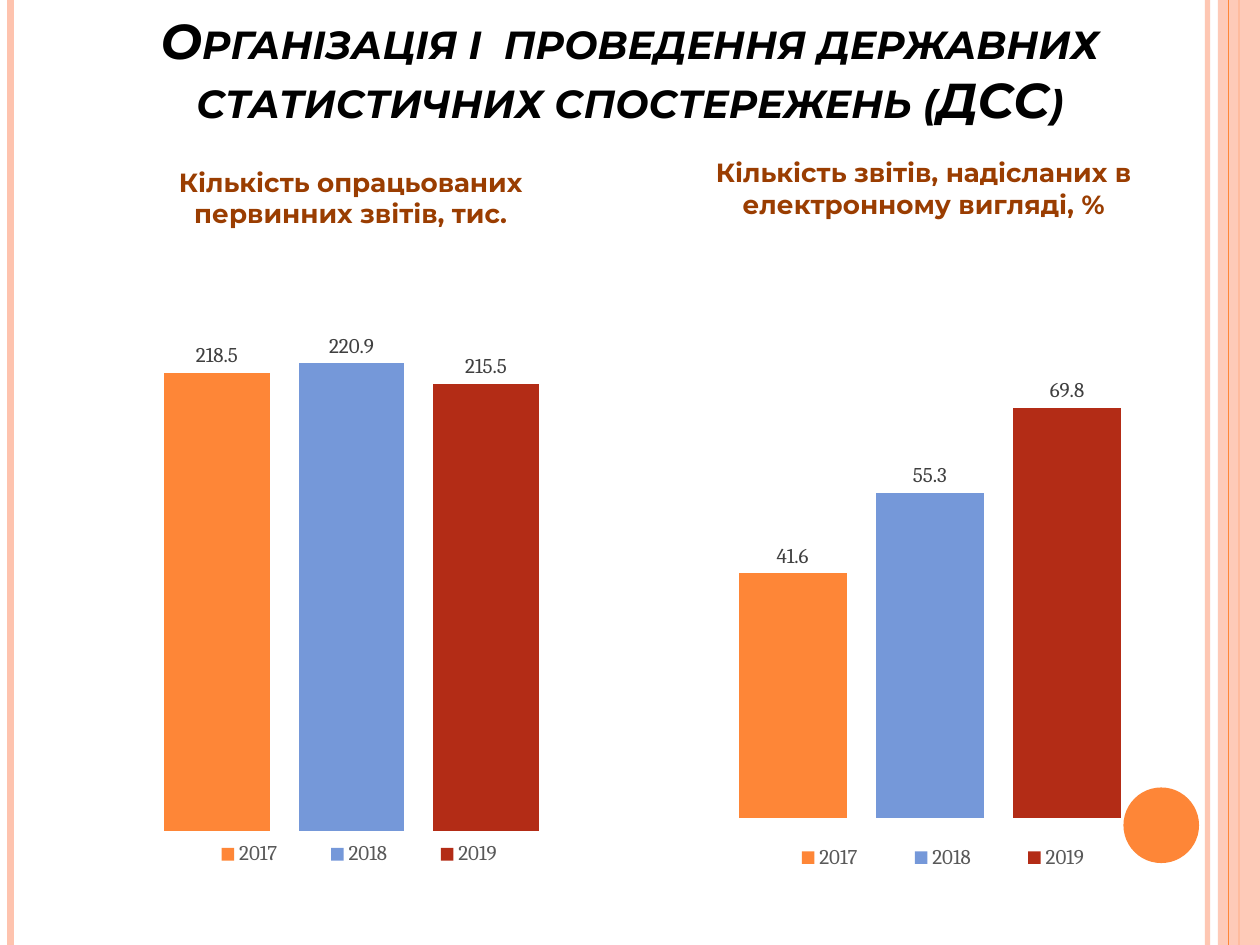
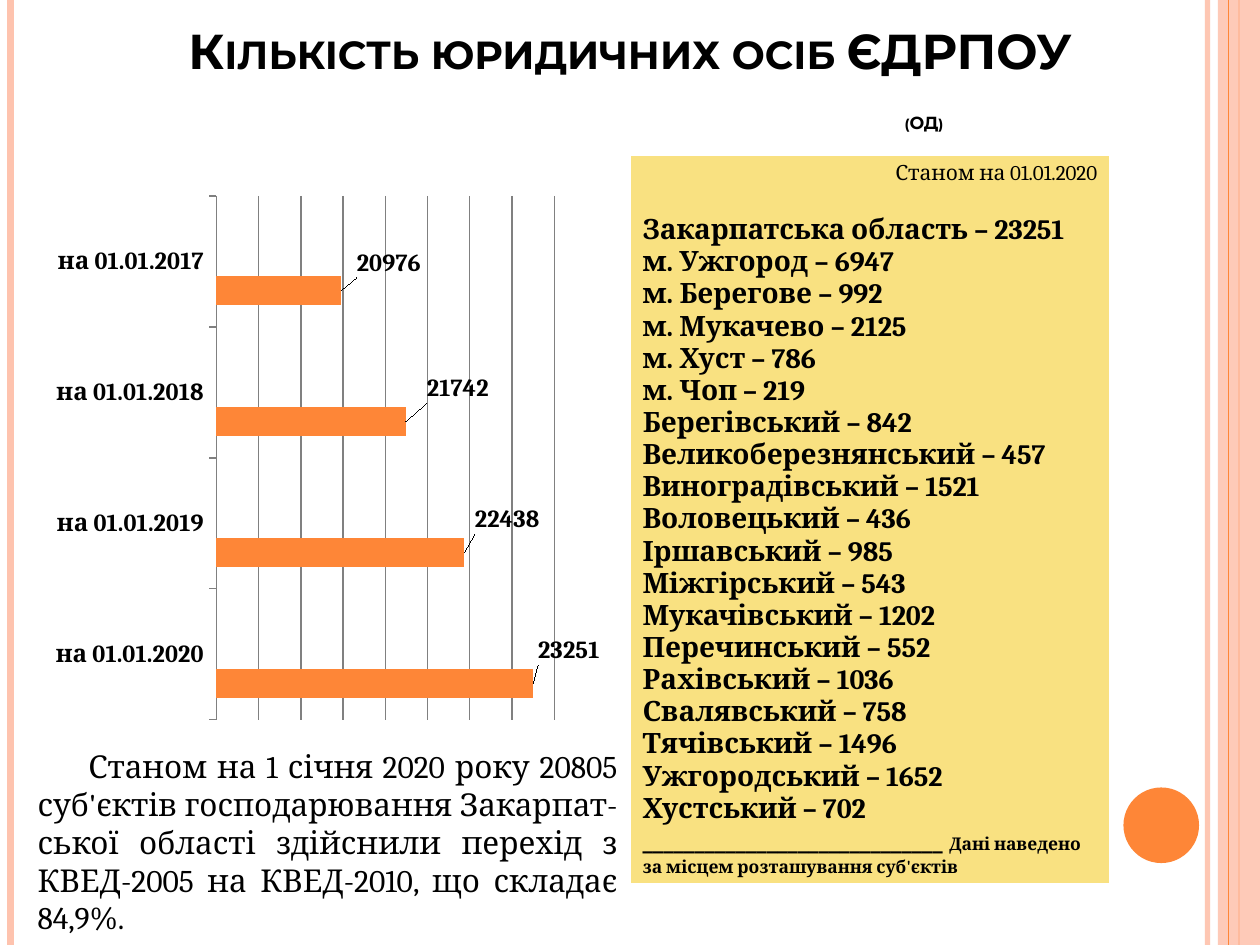
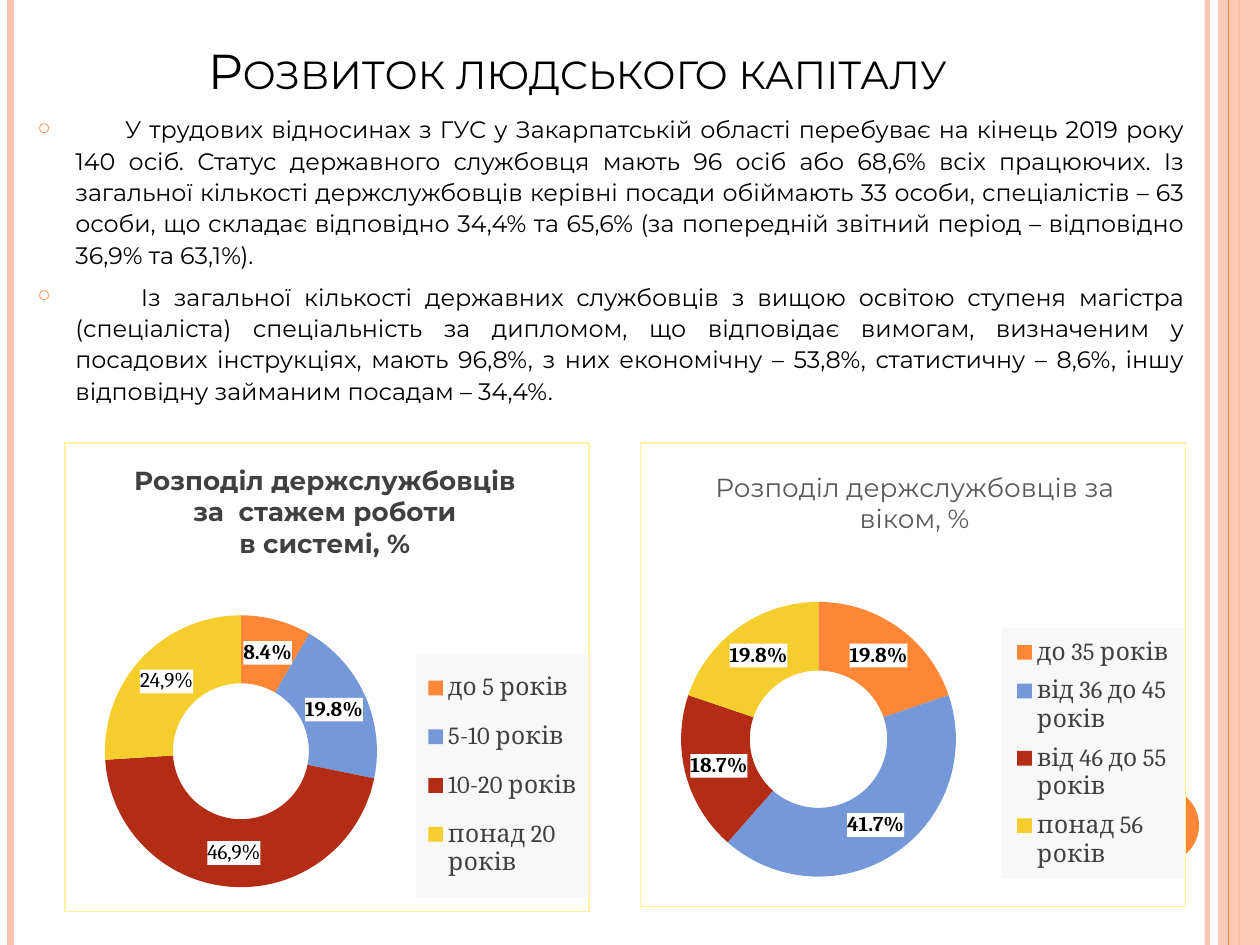
from pptx import Presentation
from pptx.chart.data import CategoryChartData
from pptx.dml.color import RGBColor
from pptx.enum import chart as ch, shapes, text
from pptx.oxml import parse_xml
from pptx.oxml.ns import nsdecls, qn
from pptx.util import Pt

HEAD, BODY = "Montserrat", "Cambria"
ORANGE, BLUE, RED, GOLD = HUES = ["FE8637", "7598D9", "B32C16", "F5CD2D"]
PEACH, BROWN, GREY, DARK = "FEC3AE", "9A3D01", "595959", "404040"
MID, JUST, END = (text.PP_ALIGN.CENTER, text.PP_ALIGN.JUSTIFY,
                  text.PP_ALIGN.RIGHT)

DISTRICTS = """Закарпатська область – 23251
м. Ужгород – 6947
м. Берегове – 992
м. Мукачево – 2125
м. Хуст – 786
м. Чоп – 219
Берегівський – 842
Великоберезнянський – 457
Виноградівський – 1521
Воловецький – 436
Іршавський – 985
Міжгірський – 543
Мукачівський – 1202
Перечинський – 552
Рахівський – 1036
Свалявський – 758
Тячівський – 1496
Ужгородський – 1652
Хустський – 702""".split("\n")

STAFF = [
    "У трудових відносинах з ГУС у Закарпатській області перебуває на кінець "
    "2019 року 140 осіб. Статус державного службовця мають 96 осіб або 68,6% "
    "всіх працюючих. Із загальної кількості держслужбовців керівні посади "
    "обіймають 33 особи, спеціалістів – 63 особи, що складає відповідно 34,4% "
    "та 65,6% (за попередній звітний період – відповідно 36,9% та 63,1%).",
    "Із загальної кількості державних службовців з вищою освітою ступеня "
    "магістра (спеціаліста) спеціальність за дипломом, що відповідає вимогам, "
    "визначеним у посадових інструкціях, мають 96,8%, з них економічну – "
    "53,8%, статистичну – 8,6%, іншу відповідну займаним посадам – 34,4%.",
]


def rgb(hue):
    return RGBColor.from_string(hue)


def style(font, size, hue="000000", name=BODY, bold=False, italic=False):
    font.size, font.name, font.bold, font.italic = Pt(size), name, bold, italic
    font.color.rgb = rgb(hue)


def say(frame, words, size, align=None, before=0, left=0, first=0, par=None,
        small=False, **look):
    """Write a paragraph, or add a run to the given one."""
    if par is None:
        par = frame.paragraphs[0]
        if par.runs:
            par = frame.add_paragraph()
        par.alignment, par.space_before = align, Pt(before)
        if left or first:
            props = par._p.get_or_add_pPr()
            props.set("marL", str(Pt(left)))
            props.set("indent", str(Pt(first)))
    run = par.add_run()
    run.text = words
    style(run.font, size, **look)
    if small:
        run._r.get_or_add_rPr().set("cap", "small")
    return par


def fade(shape, share):
    tint = shape._element.spPr.find(".//" + qn("a:srgbClr"))
    tint.append(parse_xml(f'<a:alpha {nsdecls("a")} val="{share * 1000}"/>'))


def rule(slide, x, hue, width):
    line = slide.shapes.add_connector(shapes.MSO_CONNECTOR.STRAIGHT,
                                      Pt(x), 0, Pt(x), Pt(540))
    line.line.color.rgb, line.line.width = rgb(hue), Pt(width)
    line._element.spPr.append(parse_xml(f'<a:effectLst {nsdecls("a")}/>'))
    return line


def block(slide, kind, box, hue):
    shape = slide.shapes.add_shape(kind, *map(Pt, box))
    shape.shadow.inherit = False
    shape.fill.solid()
    shape.fill.fore_color.rgb = rgb(hue)
    shape.line.fill.background()
    return shape


def page(deck, box):
    """Add a slide with its side bands; return it with its title frame."""
    slide = deck.slides.add_slide(deck.slide_layouts[5])
    fade(rule(slide, 690, PEACH, 3), 93)
    rule(slide, 6, PEACH, 4.5)
    rule(slide, 708, ORANGE, 1.5)
    band = block(slide, shapes.MSO_SHAPE.RECTANGLE, (696, 0, 24, 540), PEACH)
    fade(band, 87)
    rule(slide, 702, ORANGE, 0.75)
    block(slide, shapes.MSO_SHAPE.OVAL, (642, 450, 43.2, 43.2), ORANGE)
    title = slide.shapes.title
    title.left, title.top, title.width, title.height = map(Pt, box)
    frame = title.text_frame
    frame.auto_size = text.MSO_AUTO_SIZE.NONE
    frame.word_wrap = True
    frame.vertical_anchor = text.MSO_ANCHOR.BOTTOM
    return slide, frame


def note(slide, box):
    frame = slide.shapes.add_textbox(*map(Pt, box)).text_frame
    frame.word_wrap = True
    return frame


def place(item, prev, spots, mode="edge"):
    """Give a chart part a manual layout, put after its child prev."""
    old = item.find(qn("c:layout"))
    if old is not None:
        item.remove(old)
    inner = '<c:layoutTarget val="inner"/>' if prev is None else ""
    modes = "".join(f'<c:{a}Mode val="{mode}"/>' for a in "xy")
    sizes = "".join(f'<c:{a} val="{v}"/>' for a, v in zip("xywh", spots))
    node = parse_xml(f'<c:layout {nsdecls("c")}><c:manualLayout>{inner}{modes}'
                     f'{sizes}</c:manualLayout></c:layout>')
    if prev is None:
        item.insert(0, node)
    else:
        item.find(qn(prev)).addnext(node)


def paint(item, prev, hue, edge=None):
    """Fill a chart part; its properties go after its child prev."""
    def solid(tint):
        return f'<a:solidFill><a:srgbClr val="{tint}"/></a:solidFill>'
    line = solid(edge) if edge else "<a:noFill/>"
    item.find(qn(prev)).addnext(parse_xml(
        f'<c:spPr {nsdecls("c", "a")}>{solid(hue)}'
        f'<a:ln w="9525">{line}</a:ln></c:spPr>'))


def graph(slide, kind, box, cats, rows, plot):
    data = CategoryChartData()
    data.categories = cats
    for name, vals in rows:
        data.add_series(name, vals)
    chart = slide.shapes.add_chart(kind, *map(Pt, box), data).chart
    style(chart.font, 10)
    chart.has_title = chart.has_legend = False
    place(chart._chartSpace.chart.plotArea, None, plot)
    return chart


def tint(part, hue):
    part.format.fill.solid()
    part.format.fill.fore_color.rgb = rgb(hue)


def head(chart, lines, spot, **look):
    chart.has_title = True
    for line in lines:
        say(chart.chart_title.text_frame, line, 15, MID, name=HEAD, **look)
    place(chart.chart_title._element, "c:tx", spot)


def key(chart, where, spots, size, hue):
    chart.has_legend = True
    legend = chart.legend
    legend.position, legend.include_in_layout = where, False
    style(legend.font, size, hue)
    place(legend._element, "c:legendPos", spots)
    return legend


def scale(chart, low, high):
    axis = chart.value_axis
    axis.minimum_scale, axis.maximum_scale = low, high
    axis.visible = False
    return axis


def years(slide, box, vals, low, high, plot, lines, spot, legend):
    rows = [(str(2017 + i), [v]) for i, v in enumerate(vals)]
    chart = graph(slide, ch.XL_CHART_TYPE.COLUMN_CLUSTERED, box, ["1"],
                  rows, plot)
    scale(chart, low, high).has_major_gridlines = False
    chart.category_axis.visible = False
    chart.plots[0].gap_width, chart.plots[0].overlap = 219, -27
    for bar, hue in zip(chart.plots[0].series, HUES):
        tint(bar, hue)
        labels = bar.data_labels
        labels.show_value = True
        labels.position = ch.XL_LABEL_POSITION.OUTSIDE_END
        style(labels.font, 12, DARK)
    head(chart, lines, spot, hue=BROWN, bold=True)
    key(chart, ch.XL_LEGEND_POSITION.BOTTOM, legend, 12, GREY)


def firms(slide):
    cats = [f"на 01.01.{y}" for y in range(2020, 2016, -1)]
    rows = [("Series 1", [23251, 22438, 21742, 20976]),
            ("Series 2", [None] * 4), ("Series 3", [None] * 4)]
    chart = graph(slide, ch.XL_CHART_TYPE.BAR_CLUSTERED,
                  (31, 105.8, 311.8, 311.8), cats, rows, (.3, .02, .625, .96))
    style(chart.font, 14, bold=True)
    axis = scale(chart, 19500, 23500)
    axis.major_unit = 500
    for line in (axis.major_gridlines.format.line,
                 chart.category_axis.format.line):
        line.color.rgb, line.width = rgb("808080"), Pt(0.75)
    chart.category_axis.major_tick_mark = ch.XL_TICK_MARK.OUTSIDE
    plot = chart.plots[0]
    plot.gap_width = 150
    for bar, hue in zip(plot.series, HUES):
        tint(bar, hue)
    bar = plot.series[0]
    bar.data_labels.show_value = True
    shifts = [(0, -.06), (.01, -.06), (.03, -.06), (.02, -.05)]
    for i, shift in enumerate(shifts):
        label = bar.points[i].data_label
        label.position = ch.XL_LABEL_POSITION.OUTSIDE_END
        place(label._dLbl, "c:idx", shift, "factor")


def ring(slide, box, cats, vals, plot, lines, spot, legend, own=None, **look):
    chart = graph(slide, ch.XL_CHART_TYPE.DOUGHNUT, box, cats,
                  [("Series 1", vals)], plot)
    paint(chart._chartSpace, "c:chart", "FFFFFF", "FFF39D")
    series = chart.plots[0].series[0]
    labels = series.data_labels
    labels.show_percentage, labels.show_value = True, False
    labels.number_format, labels.number_format_is_linked = "0.0%", False
    style(labels.font, 12, bold=True)
    paint(labels._element, "c:numFmt", "FFFFFF")
    for i, hue in enumerate(HUES):
        tint(series.points[i], hue)
    for i, words in (own or {}).items():
        label = series.points[i].data_label
        say(label.text_frame, words, 12)
        paint(label._dLbl, "c:tx", "FFFFFF")
    head(chart, lines, spot, **look)
    side = key(chart, ch.XL_LEGEND_POSITION.RIGHT, legend, 14, DARK)
    paint(side._element, "c:overlay", "F8F8F8")


def list_firms(slide):
    grid = slide.shapes.add_table(1, 1, *map(Pt, (360, 88.6, 274.3, 371.5)))
    cell = grid.table.cell(0, 0)
    cell.fill.solid()
    cell.fill.fore_color.rgb = rgb("F9E181")
    frame = cell.text_frame
    say(frame, "Станом на 01.01.2020", 12, END)
    for i, words in enumerate(DISTRICTS):
        say(frame, words, 16, before=0 if i else 16.5, bold=True)
    last = say(frame, "_" * 29 + " ", 16, bold=True)
    say(frame, "Дані наведено за місцем розташування суб'єктів", 10,
        par=last, bold=True)


def bullet(par, stop):
    """Hollow bullet, with a tab stop for the first line."""
    props = par._p.get_or_add_pPr()
    for node in (f'<a:buClr {nsdecls("a")}><a:srgbClr val="{ORANGE}"/></a:buClr>',
                 f'<a:buSzPct {nsdecls("a")} val="70000"/>',
                 f'<a:buChar {nsdecls("a")} char="○"/>',
                 f'<a:tabLst {nsdecls("a")}><a:tab pos="{Pt(stop)}" '
                 f'algn="l"/></a:tabLst>'):
        props.append(parse_xml(node))


def reports(deck):
    slide, title = page(deck, (36, 21.6, 648, 55.4))
    say(title, "Організація і  проведення державних статистичних "
        "спостережень (ДСС)", 28, MID, name=HEAD, bold=True, italic=True,
        small=True)
    years(slide, (20.2, 77, 362.9, 430.6), [218.5, 220.9, 215.5], 100, 250,
          (.02, .154, .956, .77),
          ["Кількість опрацьованих", "первинних звітів, тис."],
          (.22, .035), (.22, .93, .58, .05))
    years(slide, (342.7, 71.3, 377.3, 436.3), [41.6, 55.3, 69.8], 0, 100,
          (.031, .138, .938, .77),
          ["Кількість звітів, надісланих в", "електронному вигляді, %"],
          (.17, .035), (.23, .935, .58, .05))


def entities(deck):
    slide, title = page(deck, (36, 9.4, 648, 70))
    look = dict(name=HEAD, bold=True, small=True)
    say(title, "Кількість юридичних осіб ЄДРПОУ", 28, MID, **look)
    say(title, "(ОД)", 10, MID, before=18.7, left=336, **look)
    firms(slide)
    list_firms(slide)
    say(note(slide, (14.4, 423.4, 345.6, 116.6)),
        "Станом на 1 січня 2020 року 20805 суб'єктів господарювання "
        "Закарпат-ської області здійснили перехід з КВЕД-2005 на КВЕД-2010, "
        "що складає 84,9%.", 18, JUST, first=29)


def people(deck):
    slide, title = page(deck, (36, 21.6, 588, 38.9))
    say(title, "Розвиток людського капіталу", 28, MID, name=HEAD, small=True)
    frame = note(slide, (14.4, 60.5, 668.9, 198.7))
    for words, stop in zip(STAFF, (50, 59)):
        par = say(frame, "\t" + words, 13.6, JUST, before=6, left=21.6,
                  first=-21.6, name=HEAD)
        par.line_spacing = 1.1
        bullet(par, stop)
    ring(slide, (36.7, 252.7, 300.2, 268.6),
         ["до 5 років", "5-10 років", "10-20 років", "понад 20 років"],
         [8.4, 19.8, 45.8, 26], (.076, .368, .52, .58),
         ["Розподіл держслужбовців", "за  стажем роботи", "в системі, %"],
         (.125, .035), (.67, .45, .33, .52), {2: "46,9%", 3: "24,9%"},
         hue=DARK, bold=True)
    ring(slide, (365.8, 252.7, 311.8, 265.7),
         ["до 35 років", "від 36 до 45 років", "від 46 до 55 років",
          "понад 56 років"],
         [19.8, 41.7, 18.7, 19.8], (.074, .342, .505, .595),
         ["Розподіл держслужбовців за", "віком, %"],
         (.13, .05), (.663, .4, .335, .54), hue=GREY)


def main():
    deck = Presentation()
    deck.slide_width, deck.slide_height = Pt(720), Pt(540)
    reports(deck)
    entities(deck)
    people(deck)
    deck.save("out.pptx")


if __name__ == "__main__":
    main()
